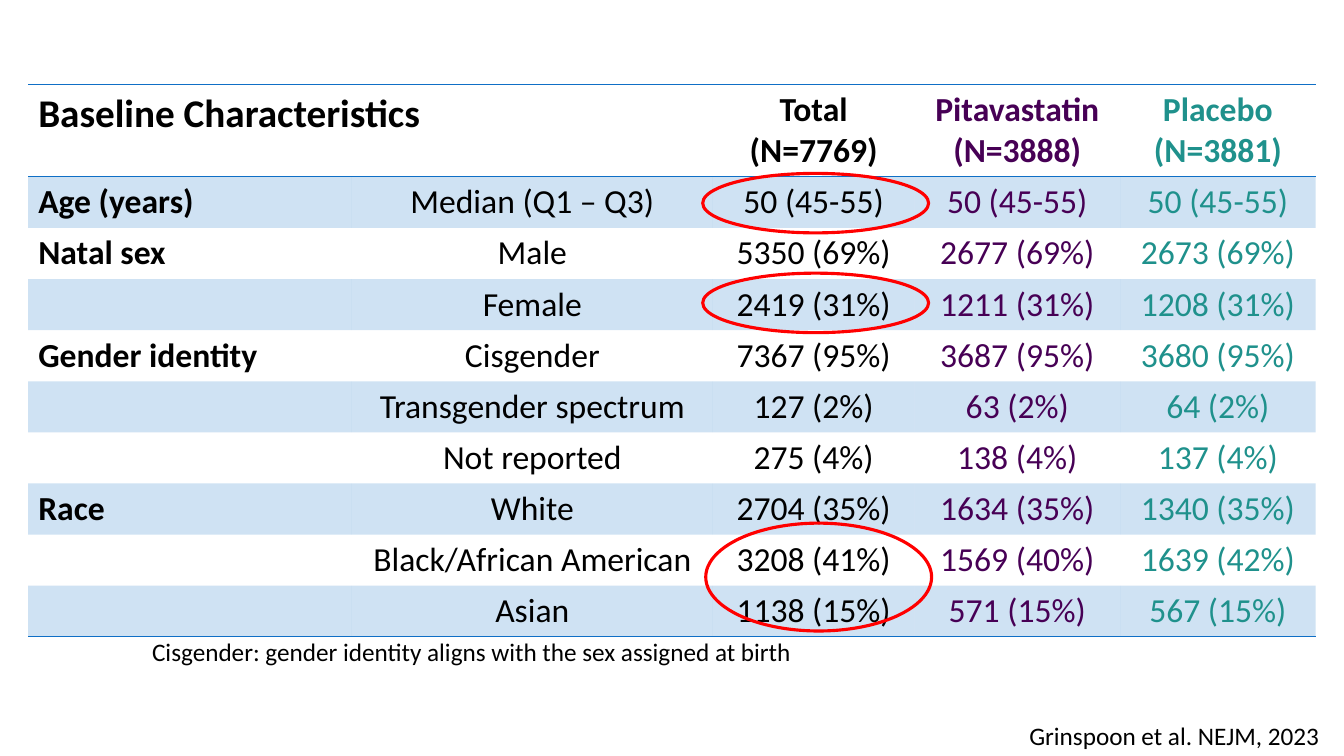
from dataclasses import dataclass

from lxml.etree import SubElement
from pptx import Presentation
from pptx.dml.color import RGBColor as Color
from pptx.enum.shapes import MSO_SHAPE as Shape
from pptx.enum.text import MSO_ANCHOR as Anchor, MSO_AUTO_SIZE as Fit, PP_ALIGN as Align
from pptx.oxml.ns import qn
from pptx.util import Inches, Pt


@dataclass(frozen=True)
class Theme:
    font: str = "Calibri"
    black: str = "000000"
    purple: str = "470055"
    teal: str = "1F918C"
    blue: str = "0F6FC6"
    red: str = "FF0000"
    title: int = 28
    body: int = 24
    note: int = 18
    rule: float = 1
    ring: float = 2.25
    tint: int = 20


@dataclass(frozen=True)
class Box:
    left: float
    top: float
    width: float
    height: float

    def emu(self) -> list:
        return [Inches(v) for v in (self.left, self.top, self.width, self.height)]


@dataclass(frozen=True)
class Note:
    text: str
    box: Box


@dataclass(frozen=True)
class Column:
    width: float
    color: str
    align: Align = Align.CENTER
    anchor: Anchor = Anchor.MIDDLE
    bold: bool = False


THEME = Theme()
NO_STYLE = "{2D5ABB26-0587-4C30-8999-92F81FD0307C}"
GRID = Box(0.28, 0.84, 12.77, 5.4)
HEAD, ROW = 0.9, 0.5

COLUMNS = [
    Column(3.21, THEME.black, Align.LEFT, Anchor.TOP, True),
    Column(3.58, THEME.black),
    Column(2, THEME.black),
    Column(2.04, THEME.purple),
    Column(1.94, THEME.teal),
]
ROWS = [
    ("Baseline Characteristics", "", "Total\n(N=7769)", "Pitavastatin (N=3888)", "Placebo\n(N=3881)"),
    ("Age (years)", "Median (Q1 – Q3)", "50 (45-55)", "50 (45-55)", "50 (45-55)"),
    ("Natal sex", "Male", "5350 (69%)", "2677 (69%)", "2673 (69%)"),
    ("", "Female", "2419 (31%)", "1211 (31%)", "1208 (31%)"),
    ("Gender identity", "Cisgender", "7367 (95%)", "3687 (95%)", "3680 (95%)"),
    ("", "Transgender spectrum", "127 (2%)", "63 (2%)", "64 (2%)"),
    ("", "Not reported", "275 (4%)", "138 (4%)", "137 (4%)"),
    ("Race", "White", "2704 (35%)", "1634 (35%)", "1340 (35%)"),
    ("", "Black/African American", "3208 (41%)", "1569 (40%)", "1639 (42%)"),
    ("", "Asian", "1138 (15%)", "571 (15%)", "567 (15%)"),
]
NOTES = [
    Note("Grinspoon et al. NEJM, 2023", Box(10.11, 7.1, 3.11, 0.4)),
    Note("Cisgender: gender identity aligns with the sex assigned at birth", Box(1.41, 6.26, 6.62, 0.4)),
]
RINGS = [
    Box(6.97, 1.72, 2.24, 0.59),
    Box(6.97, 2.71, 2.24, 0.59),
    Box(7, 5.19, 2.24, 1.07),
]


def write(frame, text: str, size: int, color: str, bold: bool = False, align: Align = Align.LEFT) -> None:
    frame.text = text
    for para in frame.paragraphs:
        para.alignment = align
        for run in para.runs:
            font = run.font
            font.name, font.size, font.bold = THEME.font, Pt(size), bold
            font.color.rgb = Color.from_string(color)


def add_rule(cell, side: str) -> None:
    """Draw one cell border; side is an element name such as a:lnT."""
    line = SubElement(cell._tc.get_or_add_tcPr(), qn(side), w=str(Pt(THEME.rule)))
    fill = SubElement(line, qn("a:solidFill"))
    SubElement(fill, qn("a:srgbClr"), val=THEME.blue)


def tint(cell) -> None:
    """Fill a cell with see-through blue."""
    cell.fill.solid()
    cell.fill.fore_color.rgb = Color.from_string(THEME.blue)
    shade = next(cell._tc.tcPr.find(qn("a:solidFill")).iter(qn("a:srgbClr")))
    SubElement(shade, qn("a:alpha"), val=str(THEME.tint * 1000))


def add_grid(slide) -> None:
    frame = slide.shapes.add_table(len(ROWS), len(COLUMNS), *GRID.emu())
    table = frame.table
    next(frame._element.iter(qn("a:tableStyleId"))).text = NO_STYLE
    table.first_row = table.horz_banding = False
    for col, spec in zip(table.columns, COLUMNS):
        col.width = Inches(spec.width)
    last = len(ROWS) - 1
    for r, texts in enumerate(ROWS):
        head = r == 0
        table.rows[r].height = Inches(HEAD if head else ROW)
        for c, (spec, text) in enumerate(zip(COLUMNS, texts)):
            cell = table.cell(r, c)
            size = THEME.title if head and c == 0 else THEME.body
            write(cell.text_frame, text, size, spec.color, head or spec.bold, spec.align)
            cell.vertical_anchor = spec.anchor
            if head:
                add_rule(cell, "a:lnT")
            if r in (0, last):
                add_rule(cell, "a:lnB")
            if r % 2:
                tint(cell)
            else:
                cell.fill.background()
    table.cell(0, 0).merge(table.cell(0, 1))


def add_note(slide, note: Note) -> None:
    frame = slide.shapes.add_textbox(*note.box.emu()).text_frame
    write(frame, note.text, THEME.note, THEME.black)
    frame.word_wrap = False
    frame.auto_size = Fit.SHAPE_TO_FIT_TEXT


def add_ring(slide, box: Box) -> None:
    ring = slide.shapes.add_shape(Shape.OVAL, *box.emu())
    ring.shadow.inherit = False
    ring.fill.background()
    ring.line.color.rgb = Color.from_string(THEME.red)
    ring.line.width = Pt(THEME.ring)


def main() -> None:
    deck = Presentation()
    deck.slide_width, deck.slide_height = Inches(13.33), Inches(7.5)
    slide = deck.slides.add_slide(deck.slide_layouts[6])
    add_grid(slide)
    for note in NOTES:
        add_note(slide, note)
    for box in RINGS:
        add_ring(slide, box)
    deck.save("out.pptx")


if __name__ == "__main__":
    main()
